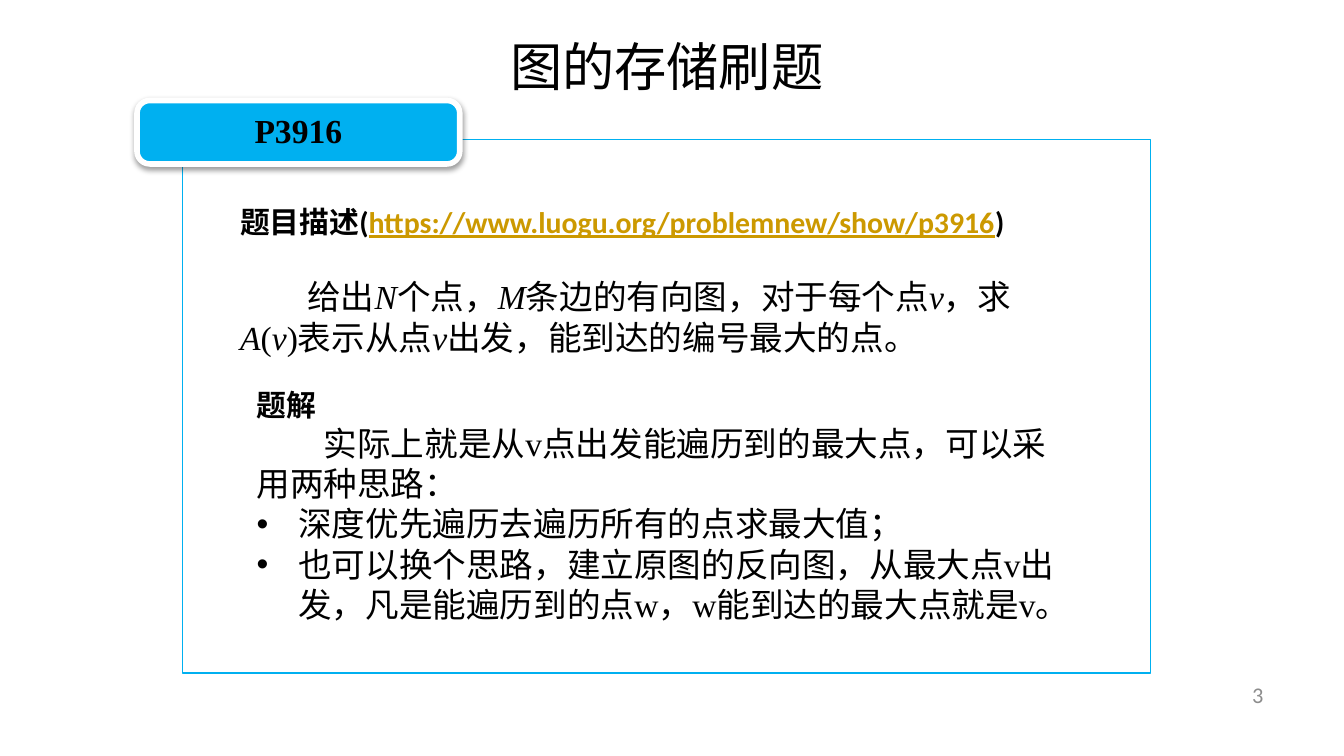
from dataclasses import dataclass

from lxml import etree
from pptx import Presentation
from pptx.dml.color import RGBColor
from pptx.enum.shapes import MSO_SHAPE
from pptx.enum.text import MSO_ANCHOR, MSO_AUTO_SIZE, PP_ALIGN
from pptx.oxml import parse_xml
from pptx.oxml.ns import nsdecls, qn
from pptx.util import Cm, Pt

BLACK = RGBColor(0x00, 0x00, 0x00)
WHITE = RGBColor(0xFF, 0xFF, 0xFF)
BLUE = RGBColor(0x00, 0xB0, 0xF0)
GOLD = RGBColor(0xCC, 0x99, 0x00)
GRAY = RGBColor(0x8C, 0x8C, 0x8C)

LEFT, CENTER, RIGHT = PP_ALIGN.LEFT, PP_ALIGN.CENTER, PP_ALIGN.RIGHT
TOP, MIDDLE = MSO_ANCHOR.TOP, MSO_ANCHOR.MIDDLE
FIT_SHAPE = MSO_AUTO_SIZE.SHAPE_TO_FIT_TEXT
RECTANGLE, ROUNDED = MSO_SHAPE.RECTANGLE, MSO_SHAPE.ROUNDED_RECTANGLE

SANS, SERIF, CJK = "Calibri", "Times New Roman", "Noto Sans CJK SC"


@dataclass
class Span:
    text: str
    italic: bool = False
    link: bool = False


@dataclass
class Para:
    spans: list[Span]
    font: str = SERIF
    size: float = 18
    bold: bool = False
    color: RGBColor = BLACK
    align: PP_ALIGN = LEFT
    line_spacing: float = 1.0
    space_before: float = 0
    margin: float = 0
    indent: float = 0
    bullet: str = ""


def math_spans(marked: str) -> list[Span]:
    """Split at asterisks; every second piece is an italic symbol."""
    return [Span(piece, italic=i % 2 == 1)
            for i, piece in enumerate(marked.split("*"))]


def heading(*spans: Span) -> Para:
    return Para(list(spans), font=SANS, size=16, bold=True)


def bullet_item(text: str) -> Para:
    return Para([Span(text)], margin=0.79, indent=-0.79, bullet="•")


def write(frame, paras: list[Para]) -> None:
    for i, para in enumerate(paras):
        line = frame.paragraphs[0] if i == 0 else frame.add_paragraph()
        props = line._p.get_or_add_pPr()
        props.set("marL", str(Cm(para.margin)))
        props.set("indent", str(Cm(para.indent)))
        line.alignment = para.align
        line.line_spacing = para.line_spacing
        if para.space_before:
            line.space_before = Pt(para.space_before)
        if para.bullet:
            etree.SubElement(props, qn("a:buFont")).set("typeface", "Arial")
            etree.SubElement(props, qn("a:buChar")).set("char", para.bullet)
        line.font.name = para.font
        line.font.size = Pt(para.size)
        line.font.bold = para.bold
        if not any(span.link for span in para.spans):
            line.font.color.rgb = para.color
        for span in para.spans:
            run = line.add_run()
            run.text = span.text
            if span.italic:
                run.font.italic = True
            if span.link:
                run.font.underline = True
                run.font.color.rgb = GOLD


def add_text(slide, left: float, top: float, width: float, height: float,
             paras: list[Para], anchor: MSO_ANCHOR = TOP, fit: bool = True) -> None:
    frame = slide.shapes.add_textbox(
        Cm(left), Cm(top), Cm(width), Cm(height)).text_frame
    frame.word_wrap = True
    frame.vertical_anchor = anchor
    if fit:
        frame.auto_size = FIT_SHAPE
    write(frame, paras)


def add_block(slide, kind: MSO_SHAPE, left: float, top: float, width: float,
              height: float, fill: RGBColor, line: RGBColor, weight: float):
    block = slide.shapes.add_shape(kind, Cm(left), Cm(top), Cm(width), Cm(height))
    block.shadow.inherit = False
    block.fill.solid()
    block.fill.fore_color.rgb = fill
    block.line.color.rgb = line
    block.line.width = Pt(weight)
    return block


def main() -> None:
    deck = Presentation()
    deck.slide_width, deck.slide_height = Cm(25.4), Cm(14.29)
    slide = deck.slides.add_slide(deck.slide_layouts[6])

    # Page number and title
    add_text(slide, 18.21, 12.75, 5.92, 0.76,
             [Para([Span("3")], font=SANS, size=12, color=GRAY, align=RIGHT)],
             anchor=MIDDLE, fit=False)
    add_text(slide, 8.41, 0.1, 8.38, 1.7,
             [Para([Span("图的存储刷题")], font=CJK, size=28, align=CENTER,
                   line_spacing=1.35)])

    # Frame with a slightly transparent fill
    panel = add_block(slide, RECTANGLE, 3.45, 2.64, 18.29, 10.08, WHITE, BLUE, 0.75)
    panel_color = panel._element.spPr.find(qn("a:solidFill"))[0]
    etree.SubElement(panel_color, qn("a:alpha")).set("val", "90000")

    # Problem number badge with a soft shadow
    badge = add_block(slide, ROUNDED, 2.59, 1.9, 6.1, 1.2, BLUE, WHITE, 3)
    badge.adjustments[0] = 0.2
    effects = badge._element.spPr.find(qn("a:effectLst"))
    effects.append(parse_xml(
        f'<a:outerShdw {nsdecls("a")} blurRad="{Pt(3.1)}" dist="{Pt(1.6)}" '
        'dir="5400000" rotWithShape="0"><a:srgbClr val="000000">'
        '<a:alpha val="38000"/></a:srgbClr></a:outerShdw>'))
    label = badge.text_frame
    label.margin_left = label.margin_right = Cm(0.61)
    label.margin_top = label.margin_bottom = Cm(0.15)
    label.vertical_anchor = MIDDLE
    write(label, [Para([Span("P3916")], bold=True, align=CENTER, line_spacing=0.9)])

    # Problem statement
    add_text(slide, 4.29, 3.73, 15.98, 3.18, [
        heading(Span("题目描述("),
                Span("https://www.luogu.org/problemnew/show/p3916", link=True),
                Span(")")),
        Para(math_spans("给出*N*个点，*M*条边的有向图，对于每个点*v*，求*A*(*v*)"
                        "表示从点*v*出发，能到达的编号最大的点。"),
             indent=1.27, space_before=19.5),
    ])

    # Solution
    add_text(slide, 4.6, 7.19, 15.98, 4.78, [
        heading(Span("题解")),
        Para([Span("实际上就是从v点出发能遍历到的最大点，可以采用两种思路：")],
             indent=1.27),
        bullet_item("深度优先遍历去遍历所有的点求最大值；"),
        bullet_item("也可以换个思路，建立原图的反向图，从最大点v出发，"
                    "凡是能遍历到的点w，w能到达的最大点就是v。"),
    ])

    deck.save("out.pptx")


if __name__ == "__main__":
    main()
